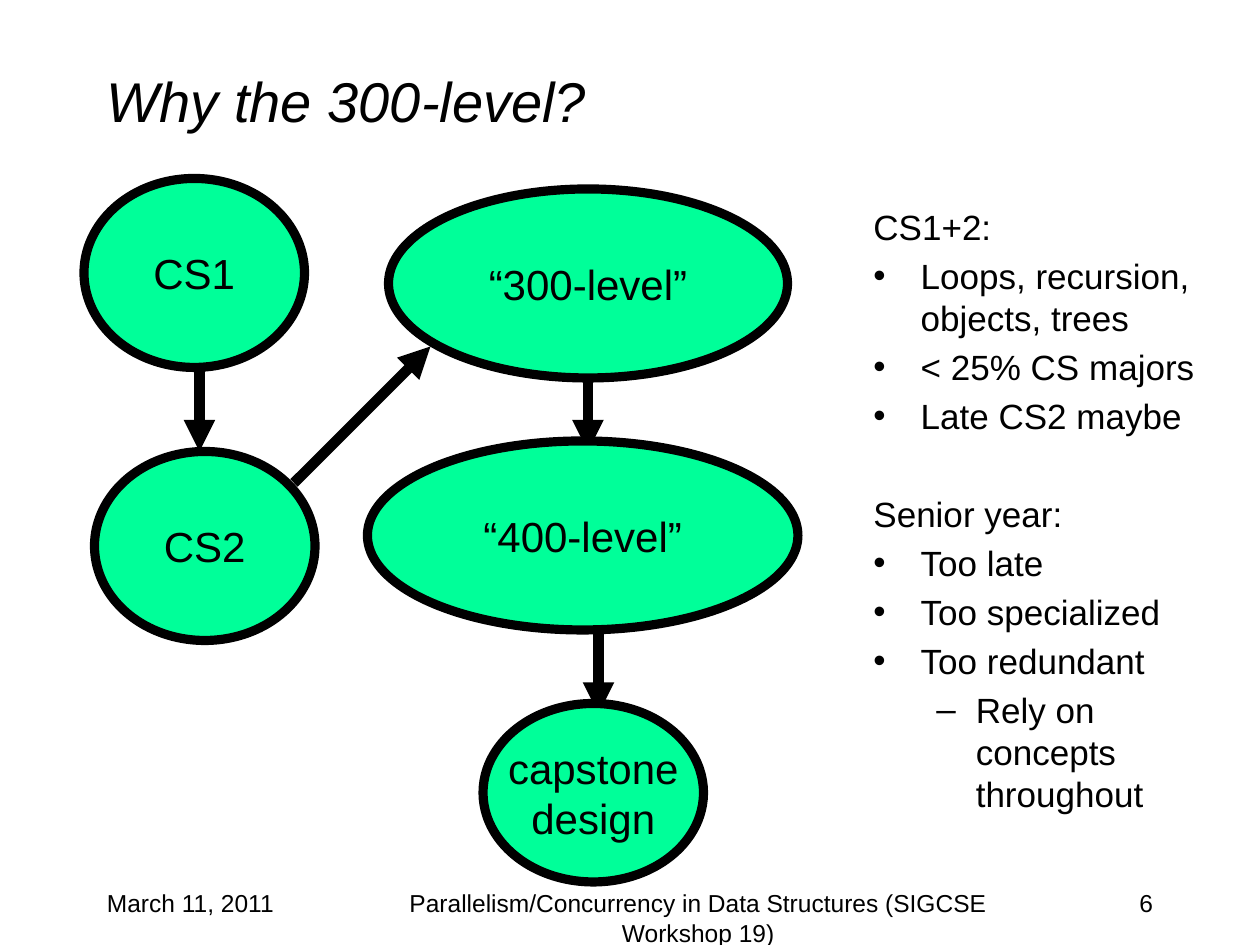
from dataclasses import dataclass

from lxml.etree import SubElement
from pptx import Presentation
from pptx.dml.color import RGBColor
from pptx.enum.shapes import MSO_CONNECTOR as Connector, MSO_SHAPE as Shape
from pptx.enum.text import MSO_ANCHOR as Anchor, PP_ALIGN as Align
from pptx.oxml.ns import qn
from pptx.util import Emu, Pt

PX = 9525  # EMU per px, 96 px to the inch
FONT = "Arial"
BLACK, GREEN = "000000", "00FF99"


@dataclass
class Course:
    lines: list[str]
    left: int
    top: int
    width: int
    height: int = 144


@dataclass
class Arrow:
    x1: int
    y1: int
    x2: int
    y2: int


@dataclass
class Point:
    text: str
    bullet: str = ""
    margin: int = 0
    hanging: int = 0
    level: int = 0
    before: int = 4


@dataclass
class Label:
    text: str
    left: int
    top: int
    width: int
    height: int
    size: int = 14
    align: Align = Align.LEFT
    anchor: Anchor = Anchor.TOP
    italic: bool = False


def px(value: int) -> Emu:
    return Emu(value * PX)


def color(value: str) -> RGBColor:
    return RGBColor.from_string(value)


def add_run(paragraph, text: str, size: int, italic: bool = False) -> None:
    run = paragraph.add_run()
    run.text = text
    run.font.name, run.font.size = FONT, Pt(size)
    run.font.italic = italic
    run.font.color.rgb = color(BLACK)


def next_paragraph(frame, index: int):
    return frame.add_paragraph() if index else frame.paragraphs[0]


def add_frame(slide, left: int, top: int, width: int, height: int):
    frame = slide.shapes.add_textbox(px(left), px(top), px(width), px(height)).text_frame
    frame.word_wrap = True
    return frame


def draw_label(slide, label: Label) -> None:
    frame = add_frame(slide, label.left, label.top, label.width, label.height)
    frame.vertical_anchor = label.anchor
    frame.paragraphs[0].alignment = label.align
    add_run(frame.paragraphs[0], label.text, label.size, label.italic)


def draw_points(slide, points: list[Point]) -> None:
    frame = add_frame(slide, 656, 152, 264, 480)
    for index, point in enumerate(points):
        paragraph = next_paragraph(frame, index)
        paragraph.level = point.level
        paragraph.space_before = Pt(point.before)
        props = paragraph._p.get_or_add_pPr()
        props.set("marL", str(px(point.margin)))
        props.set("indent", str(-px(point.hanging)))
        if point.bullet:
            SubElement(props, qn("a:buFont"), typeface=FONT)
            SubElement(props, qn("a:buChar"), char=point.bullet)
        else:
            SubElement(props, qn("a:buNone"))
        add_run(paragraph, point.text, 20)


def draw_course(slide, course: Course) -> None:
    oval = slide.shapes.add_shape(
        Shape.OVAL, px(course.left), px(course.top), px(course.width), px(course.height))
    oval.shadow.inherit = False
    oval.fill.solid()
    oval.fill.fore_color.rgb = color(GREEN)
    oval.line.color.rgb = color(BLACK)
    oval.line.width = Pt(5.25)
    frame = oval.text_frame
    frame.word_wrap = False
    frame.vertical_anchor = Anchor.MIDDLE
    for index, line in enumerate(course.lines):
        paragraph = next_paragraph(frame, index)
        paragraph.alignment = Align.CENTER
        add_run(paragraph, line, 24)


def draw_arrow(slide, arrow: Arrow) -> None:
    connector = slide.shapes.add_connector(
        Connector.STRAIGHT, px(arrow.x1), px(arrow.y1), px(arrow.x2), px(arrow.y2))
    connector.line.color.rgb = color(BLACK)
    connector.line.width = Pt(6)
    SubElement(connector.line._get_or_add_ln(), qn("a:tailEnd"), type="triangle")
    SubElement(connector._element.spPr, qn("a:effectLst"))


def bullet(text: str) -> Point:
    return Point(text, "•", 36, 36)


LABELS = [
    Label("Why the 300-level?", 72, 16, 816, 120, 32, anchor=Anchor.MIDDLE, italic=True),
    Label("March 11, 2011", 72, 672, 200, 48),
    Label("6", 688, 672, 200, 48, align=Align.RIGHT),
    Label("Parallelism/Concurrency in Data Structures (SIGCSE Workshop 19)",
          264, 672, 536, 48, align=Align.CENTER),
]

POINTS = [
    Point("CS1+2:"),
    bullet("Loops, recursion, objects, trees"),
    bullet("< 25% CS majors"),
    bullet("Late CS2 maybe"),
    Point("Senior year:", before=32),
    bullet("Too late"),
    bullet("Too specialized"),
    bullet("Too redundant"),
    Point("Rely on concepts throughout", "–", 78, 30, level=1),
]

# Back to front: some arrowheads go under the next course
FLOW = [
    Course(["CS1"], 64, 136, 168),
    Course(["CS2"], 72, 344, 168),
    Arrow(448, 280, 448, 344),
    Course(["“300-level”"], 296, 144, 304),
    Arrow(224, 368, 328, 264),
    Course(["“400-level”"], 280, 336, 328),
    Arrow(152, 280, 152, 344),
    Arrow(456, 480, 456, 544),
    Course(["capstone", "design"], 368, 536, 168, 136),
]


def main() -> None:
    deck = Presentation()
    deck.slide_width, deck.slide_height = px(960), px(720)
    slide = deck.slides.add_slide(deck.slide_layouts[6])

    # Title and footer
    for label in LABELS:
        draw_label(slide, label)

    # Reasons on the right
    draw_points(slide, POINTS)

    # Course sequence
    for part in FLOW:
        if isinstance(part, Course):
            draw_course(slide, part)
        else:
            draw_arrow(slide, part)

    deck.save("out.pptx")


if __name__ == "__main__":
    main()
